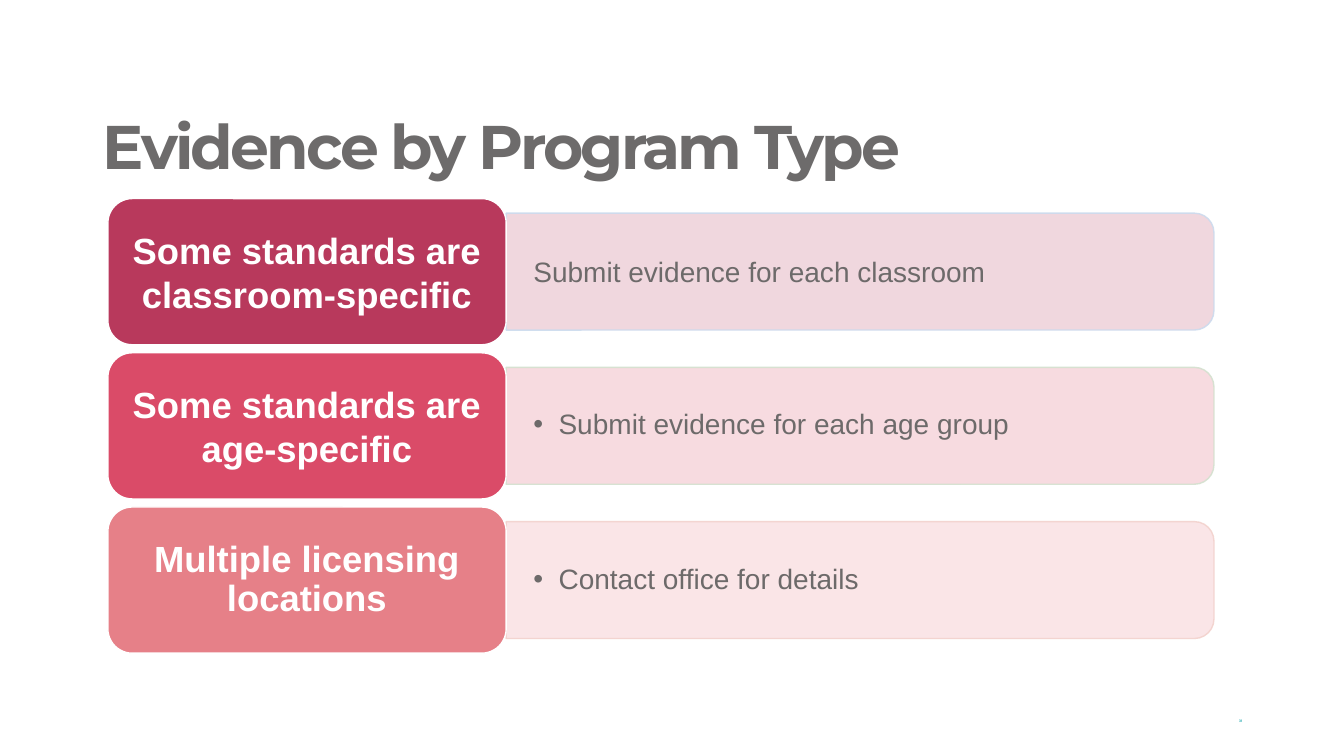
from lxml.etree import SubElement
from pptx import Presentation
from pptx.dml.color import RGBColor
from pptx.enum.shapes import MSO_SHAPE as SHAPE
from pptx.enum.text import MSO_ANCHOR as ANCHOR, MSO_AUTO_SIZE as AUTO, PP_ALIGN as ALIGN
from pptx.oxml.ns import qn
from pptx.util import Inches, Pt

WHITE = RGBColor(0xFF, 0xFF, 0xFF)
TITLE_GRAY = RGBColor(0x6D, 0x6B, 0x6B)
TEXT_GRAY = RGBColor(0x6D, 0x6A, 0x6A)
TEAL = RGBColor(0x00, 0x9D, 0xA5)
CRIMSON = RGBColor(0xB8, 0x39, 0x5C)
ROSE = RGBColor(0xDA, 0x4B, 0x68)
CORAL = RGBColor(0xE6, 0x80, 0x88)
BLUE_EDGE = RGBColor(0xCC, 0xDB, 0xEE)
GREEN_EDGE = RGBColor(0xD4, 0xE1, 0xCF)
PEACH_EDGE = RGBColor(0xF3, 0xD2, 0xCD)

ROWS = [
    ("Some standards are classroom-specific", "Submit evidence for each classroom",
     CRIMSON, BLUE_EDGE, None, False),
    ("Some standards are age-specific", "Submit evidence for each age group",
     ROSE, GREEN_EDGE, None, True),
    ("Multiple licensing locations", "Contact office for details",
     CORAL, PEACH_EDGE, 0.9, True),
]
ROW_TOP, ROW_STEP = 1.97, 1.53
LABEL_LEFT, LABEL_W, LABEL_H = 1.07, 3.95, 1.45
BAR_W, BAR_H = 7.02, 1.16
DETAIL_W, DETAIL_H = 6.97, 1.05


def write(sp, text, size, color, font="Arial", bold=False, align=ALIGN.LEFT,
          anchor=ANCHOR.MIDDLE, inset=(0.1, 0.05), spacing=None, tracking=None):
    """Put one formatted paragraph in a shape and return it."""
    tf = sp.text_frame
    tf.word_wrap = True
    tf.auto_size = AUTO.NONE
    tf.vertical_anchor = anchor
    tf.margin_left = tf.margin_right = Inches(inset[0])
    tf.margin_top = tf.margin_bottom = Inches(inset[1])
    p = tf.paragraphs[0]
    p.alignment = align
    p.line_spacing = spacing
    r = p.add_run()
    r.text = text
    r.font.name = font
    r.font.size = Pt(size)
    r.font.bold = bold
    r.font.color.rgb = color
    if tracking is not None:
        r.font._element.set("spc", str(tracking * 100))
    return p


def hang(p, indent, bullet):
    """Give a paragraph a hanging indent, with or without a bullet."""
    pPr = p._p.get_or_add_pPr()
    pPr.set("marL", str(Inches(indent)))
    pPr.set("indent", str(-Inches(indent)))
    if bullet:
        SubElement(pPr, qn("a:buFont"), typeface="Arial")
        SubElement(pPr, qn("a:buChar"), char="•")
    else:
        SubElement(pPr, qn("a:buNone"))


def set_alpha(color_format, percent):
    """Set the opacity of a solid colour."""
    SubElement(color_format, qn("a:alpha"), val=str(percent * 1000))


def add_box(slide, kind, left, top, width, height, fill, edge):
    """Add a filled preset shape with a thin outline."""
    sp = slide.shapes.add_shape(kind, Inches(left), Inches(top), Inches(width), Inches(height))
    sp.shadow.inherit = False
    sp.fill.solid()
    sp.fill.fore_color.rgb = fill
    sp.line.color.rgb = edge
    sp.line.width = Pt(1)
    return sp


def add_text(slide, left, top, width, height, text, size, color, **fmt):
    """Add a text box and return its paragraph."""
    sp = slide.shapes.add_textbox(Inches(left), Inches(top), Inches(width), Inches(height))
    return write(sp, text, size, color, **fmt)


def add_bar(slide, left, middle, fill, edge):
    """Add a pale bar rounded at its right end."""
    sp = add_box(slide, SHAPE.ROUND_2_SAME_RECTANGLE, left + (BAR_W - BAR_H) / 2,
                 middle - BAR_W / 2, BAR_H, BAR_W, fill, edge)
    sp.rotation = 90
    fill_color, edge_color = sp._element.spPr.iter(qn("a:srgbClr"))
    set_alpha(fill_color, 20)
    set_alpha(edge_color, 90)


def add_row(slide, top, label, detail, fill, edge, label_spacing, bullet):
    """Add a label box with its detail bar."""
    middle = top + LABEL_H / 2
    right = LABEL_LEFT + LABEL_W
    add_bar(slide, right, middle, fill, edge)
    p = add_text(slide, right, middle - DETAIL_H / 2, DETAIL_W, DETAIL_H, detail, 20, TEXT_GRAY,
                 inset=(0.27, 0.14), spacing=0.9 if bullet else None)
    hang(p, 0.25, bullet)
    sp = add_box(slide, SHAPE.ROUNDED_RECTANGLE, LABEL_LEFT, top, LABEL_W, LABEL_H, fill, WHITE)
    write(sp, label, 26, WHITE, bold=True, align=ALIGN.CENTER, inset=(0.11, 0.05),
          spacing=label_spacing)


def add_title(slide, text):
    """Place and format the title placeholder."""
    title = slide.shapes.title
    title.left, title.top = Inches(0.92), Inches(0.4)
    title.width, title.height = Inches(9.5), Inches(1.45)
    write(title, text, 44, TITLE_GRAY, font="Montserrat", bold=True,
          anchor=ANCHOR.BOTTOM, spacing=Pt(44), tracking=-2)


def main():
    """Build and save the slide."""
    prs = Presentation()
    prs.slide_width, prs.slide_height = Inches(13.33), Inches(7.5)
    slide = prs.slides.add_slide(prs.slide_layouts[5])
    add_title(slide, "Evidence by Program Type")
    for i, row in enumerate(ROWS):
        add_row(slide, ROW_TOP + i * ROW_STEP, *row)
    add_text(slide, 9.42, 6.95, 3, 0.4, "31", 2.5, TEAL, font="Cabin", bold=True,
             align=ALIGN.RIGHT)
    prs.save("out.pptx")


if __name__ == "__main__":
    main()
